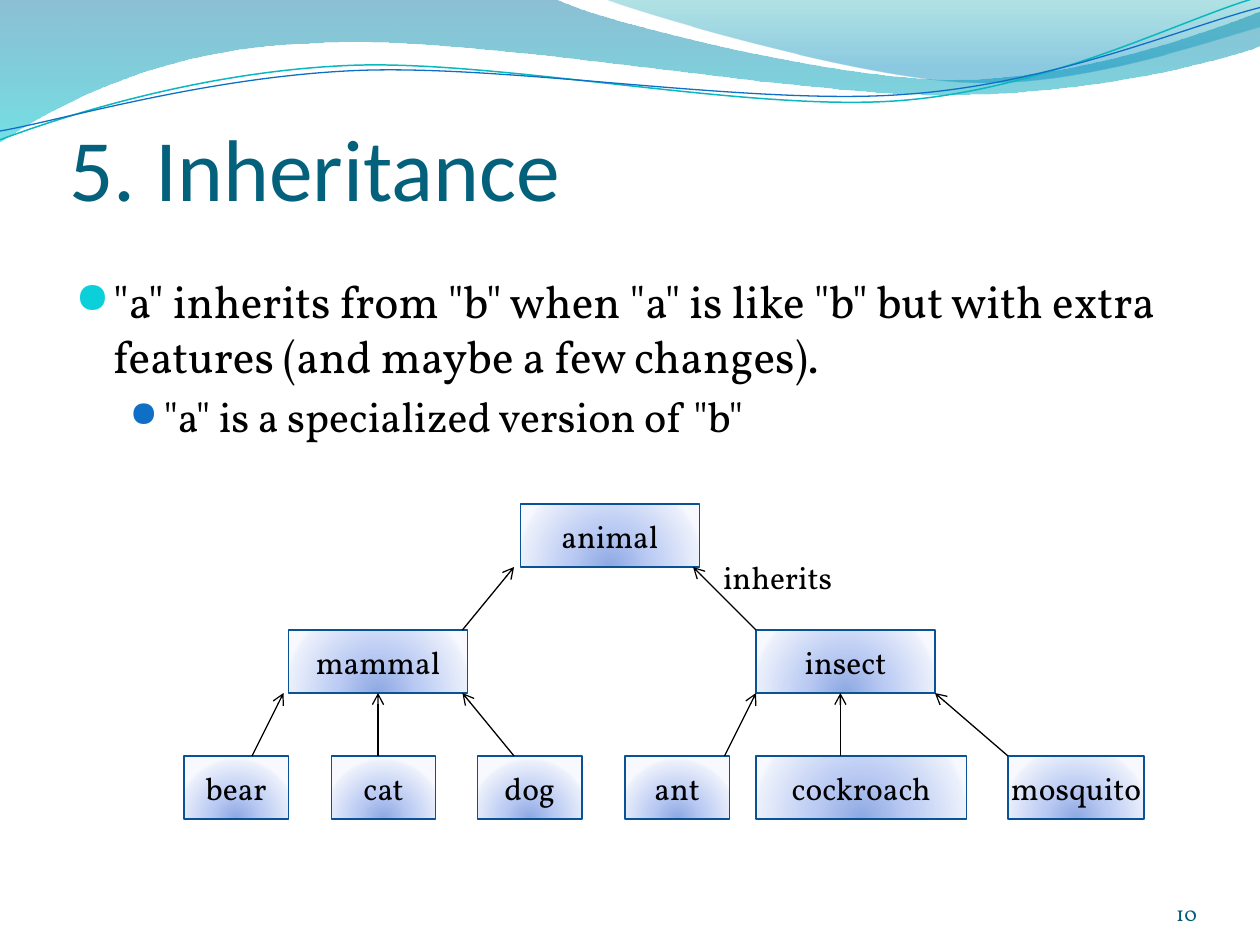
from lxml import etree
from pptx import Presentation
from pptx.dml.color import RGBColor
from pptx.enum.shapes import MSO_CONNECTOR, MSO_SHAPE
from pptx.enum.text import MSO_ANCHOR, PP_ALIGN
from pptx.oxml import parse_xml
from pptx.oxml.ns import nsdecls, qn
from pptx.util import Inches, Pt

LEFT, CENTER, RIGHT = PP_ALIGN.LEFT, PP_ALIGN.CENTER, PP_ALIGN.RIGHT
TOP, MIDDLE, BOTTOM = MSO_ANCHOR.TOP, MSO_ANCHOR.MIDDLE, MSO_ANCHOR.BOTTOM
RECTANGLE, STRAIGHT = MSO_SHAPE.RECTANGLE, MSO_CONNECTOR.STRAIGHT

THEME = {
    "heading_font": "Calibri", "body_font": "Vollkorn", "bullet_font": "OpenSymbol",
    "title": "04617B", "text": "000000", "number": "045D75",
    "box_line": "095295", "line_width": 0.75,
    "title_size": 50, "diagram_size": 18, "number_size": 12,
    # Gradient stops: position %, colour, opacity %
    "box_fill": [(0, "8DA8E3", 100), (43, "BBCBF3", 100),
                 (93, "EAEFFB", 100), (100, "F7F9FF", 100)],
    "wave_fill": [(0, "0074A1", 45), (100, "00C6CF", 55)],
    "crest_fill": [(0, "00A1A9", 30), (80, "008BBF", 45)],
}
LINEAR_DOWN = '<a:lin ang="5400000" scaled="0"/>'
GLOW_FROM_BOTTOM = ('<a:path path="circle"><a:fillToRect l="50000" t="130000" '
                    'r="50000" b="-30000"/></a:path>')

TITLE = "5. Inheritance"
# Text, size, indent, hanging, bullet colour, bullet size %
BULLETS = [
    ('"a" inherits from "b" when "a" is like "b" but with extra features '
     '(and maybe a few changes).', 26, 0.3, 0.3, "0BD0D9", 95),
    ('"a" is a specialized version of "b"', 24, 0.7, 0.27, "0F6FC6", 85),
]
PAGE_NUMBER = "10"

# Each outline is a start point, then lines (x, y) or cubic curves (six numbers)
FILLED_WAVES = [
    ([(0, 0), (4.4, -0.01), (4.76, 0.17, 6.64, 0.63, 7.58, 0.63),
      (8.53, 0.63, 9.58, 0.26, 10, 0.09), (10.01, 0.36),
      (9.83, 0.44, 8.7, 0.76, 7.46, 0.75), (6.22, 0.75, 3.82, 0.28, 2.57, 0.34),
      (1.29, 0.36, 0.46, 0.83, -0.01, 1.13)], "wave_fill"),
    ([(4.79, -0.01), (5.09, 0.11, 6.82, 0.62, 7.69, 0.65),
      (8.56, 0.69, 9.61, 0.32, 10, 0.21), (10, 0)], "crest_fill"),
]
LINE_WAVES = [
    ([(0, 1.11), (0.48, 0.93, 1.58, 0.57, 2.77, 0.52),
      (3.95, 0.47, 5.93, 0.89, 7.13, 0.8),
      (8.33, 0.71, 9.38, 0.15, 9.98, -0.02)], "0AB8BF", 0.85),
    ([(0, 1.04), (0.47, 0.96, 1.64, 0.61, 2.83, 0.56),
      (4.03, 0.51, 5.97, 0.84, 7.17, 0.75),
      (8.36, 0.67, 9.41, 0.21, 10, 0.06)], "0F6FC6", 0.75),
]

# One list per level of the tree: name, left, width
LEVELS = [
    [("animal", 4.13, 1.42)],
    [("mammal", 2.29, 1.42), ("insect", 6, 1.42)],
    [("bear", 1.46, 0.83), ("cat", 2.63, 0.83), ("dog", 3.79, 0.83),
     ("ant", 4.96, 0.83), ("cockroach", 6, 1.67), ("mosquito", 8, 1.08)],
]
# One list per gap between levels: x at the parent, x at the child
ARROWS = [
    [(4.08, 3.67), (5.5, 6)],
    [(2.25, 2), (3.67, 4.08), (3, 3), (6, 5.75), (6.67, 6.67), (7.42, 8)],
]
TREE_TOP, BOX_HEIGHT, LEVEL_STEP = 4, 0.5, 1
JOIN_TOLERANCE = 0.02


def color(value):
    return RGBColor.from_string(value)


def set_gradient(shape, stops, direction):
    stop_xml = "".join(
        f'<a:gs pos="{position * 1000}"><a:srgbClr val="{value}">'
        f'<a:alpha val="{opacity * 1000}"/></a:srgbClr></a:gs>'
        for position, value, opacity in stops)
    gradient = parse_xml(f'<a:gradFill {nsdecls("a")} rotWithShape="1">'
                         f'<a:gsLst>{stop_xml}</a:gsLst>{direction}</a:gradFill>')
    shape.fill.background()
    properties = shape._element.spPr
    properties.replace(properties.find(qn("a:noFill")), gradient)


def style_paragraph(paragraph, size, value, font="body_font", alignment=LEFT):
    paragraph.alignment = alignment
    paragraph.font.name = THEME[font]
    paragraph.font.size = Pt(size)
    paragraph.font.color.rgb = color(value)


def set_frame(frame, anchor, margins=(0.1, 0.05, 0.1, 0.05), wrap=True):
    frame.word_wrap = wrap
    frame.vertical_anchor = anchor
    (frame.margin_left, frame.margin_top,
     frame.margin_right, frame.margin_bottom) = map(Inches, margins)


def add_text(slide, text, box, size, value, anchor=TOP, alignment=LEFT, **frame):
    shape = slide.shapes.add_textbox(*map(Inches, box))
    set_frame(shape.text_frame, anchor, **frame)
    shape.text_frame.text = text
    style_paragraph(shape.text_frame.paragraphs[0], size, value, alignment=alignment)


def add_wave(slide, outline, close):
    """Build the outline through its nodes, then bend the curved segments."""
    nodes = [tuple(map(Inches, segment[-2:])) for segment in outline]
    builder = slide.shapes.build_freeform(*nodes[0])
    builder.add_line_segments(nodes[1:], close=close)
    wave = builder.convert_to_shape()
    wave.shadow.inherit = False
    lines = list(wave._element.iter(qn("a:lnTo")))
    for line, segment in zip(lines, outline[1:]):
        if len(segment) == 6:
            curve = etree.Element(qn("a:cubicBezTo"))
            for x, y in zip(segment[::2], segment[1::2]):
                etree.SubElement(curve, qn("a:pt"), x=str(Inches(x) - wave.left),
                                 y=str(Inches(y) - wave.top))
            line.getparent().replace(line, curve)
    return wave


def add_waves(slide):
    for outline, fill in FILLED_WAVES:
        wave = add_wave(slide, outline, True)
        set_gradient(wave, THEME[fill], LINEAR_DOWN)
        wave.line.fill.background()
    for outline, value, width in LINE_WAVES:
        wave = add_wave(slide, outline, False)
        wave.fill.background()
        wave.line.color.rgb = color(value)
        wave.line.width = Pt(width)


def add_title(slide):
    title = slide.shapes.title
    title.left, title.top, title.width, title.height = map(Inches, (0.55, 0.49, 9, 1.25))
    set_frame(title.text_frame, BOTTOM, (0, 0.05, 0, 0))
    title.text_frame.text = TITLE
    style_paragraph(title.text_frame.paragraphs[0], THEME["title_size"],
                    THEME["title"], "heading_font")


def add_bullets(slide):
    frame = slide.shapes.add_textbox(*map(Inches, (0.5, 2.12, 9, 4.8))).text_frame
    set_frame(frame, TOP)
    for index, (text, size, indent, hanging, value, percent) in enumerate(BULLETS):
        paragraph = frame.add_paragraph() if index else frame.paragraphs[0]
        paragraph.text = text
        paragraph.level = index
        paragraph.space_before = Pt(size * 0.2)
        properties = paragraph._p.get_or_add_pPr()
        properties.set("marL", str(Inches(indent)))
        properties.set("indent", str(-Inches(hanging)))
        bullet_color = etree.SubElement(properties, qn("a:buClr"))
        etree.SubElement(bullet_color, qn("a:srgbClr"), val=value)
        etree.SubElement(properties, qn("a:buSzPct"), val=str(percent * 1000))
        etree.SubElement(properties, qn("a:buFont"), typeface=THEME["bullet_font"])
        etree.SubElement(properties, qn("a:buChar"), char="●")
        style_paragraph(paragraph, size, THEME["text"])


def add_box(slide, name, left, top, width):
    box = slide.shapes.add_shape(RECTANGLE, *map(Inches, (left, top, width, BOX_HEIGHT)))
    box.shadow.inherit = False
    set_gradient(box, THEME["box_fill"], GLOW_FROM_BOTTOM)
    box.line.color.rgb = color(THEME["box_line"])
    box.line.width = Pt(THEME["line_width"])
    set_frame(box.text_frame, MIDDLE, wrap=False)
    box.text_frame.text = name
    style_paragraph(box.text_frame.paragraphs[0], THEME["diagram_size"],
                    THEME["text"], alignment=CENTER)
    return box


def box_centred_at(boxes, x):
    return next((box for box in boxes if abs(box.left + box.width / 2 - Inches(x))
                 < Inches(JOIN_TOLERANCE)), None)


def add_arrow(slide, parent_x, child_x, top, parents, children):
    arrow = slide.shapes.add_connector(STRAIGHT, *map(Inches, (
        parent_x, top, child_x, top + LEVEL_STEP - BOX_HEIGHT)))
    arrow.line.color.rgb = color(THEME["text"])
    arrow.line.width = Pt(THEME["line_width"])
    etree.SubElement(arrow.line._get_or_add_ln(), qn("a:headEnd"), type="arrow")
    etree.SubElement(arrow._element.spPr, qn("a:effectLst"))
    if parent := box_centred_at(parents, parent_x):
        arrow.begin_connect(parent, 2)
    if child := box_centred_at(children, child_x):
        arrow.end_connect(child, 0)


def add_tree(slide):
    tops = [TREE_TOP + level * LEVEL_STEP for level in range(len(LEVELS))]
    rows = [[add_box(slide, name, left, top, width) for name, left, width in level]
            for level, top in zip(LEVELS, tops)]
    for arrows, top, parents, children in zip(ARROWS, tops, rows, rows[1:]):
        for parent_x, child_x in arrows:
            add_arrow(slide, parent_x, child_x, top + BOX_HEIGHT, parents, children)
    add_text(slide, "inherits", (5.64, 4.38, 1.2, 0.5), THEME["diagram_size"],
             THEME["text"], wrap=False)


def main():
    presentation = Presentation()
    presentation.slide_width, presentation.slide_height = Inches(10), Inches(7.5)
    slide = presentation.slides.add_slide(presentation.slide_layouts[5])
    add_waves(slide)
    add_title(slide)
    add_bullets(slide)
    add_text(slide, PAGE_NUMBER, (8.67, 6.95, 0.83, 0.4), THEME["number_size"],
             THEME["number"], BOTTOM, RIGHT, margins=(0, 0, 0, 0))
    add_tree(slide)
    presentation.save("out.pptx")


if __name__ == "__main__":
    main()
